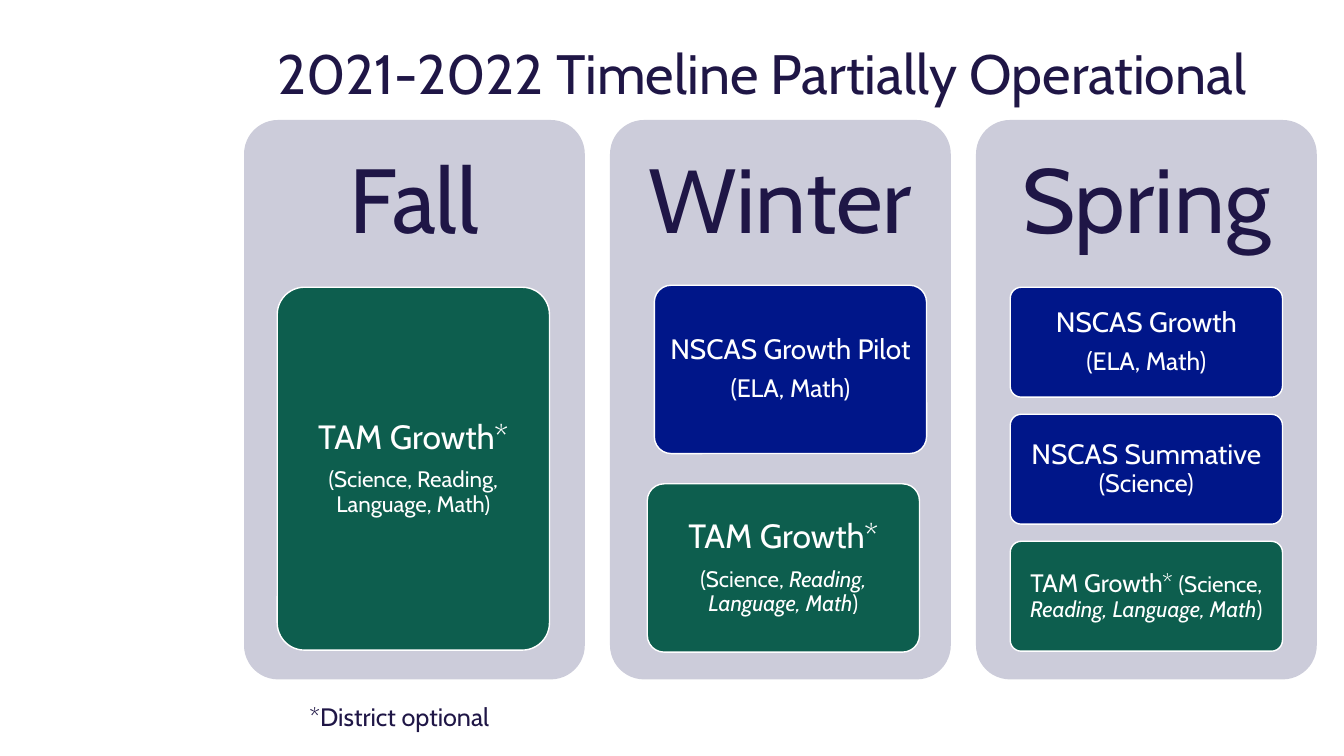
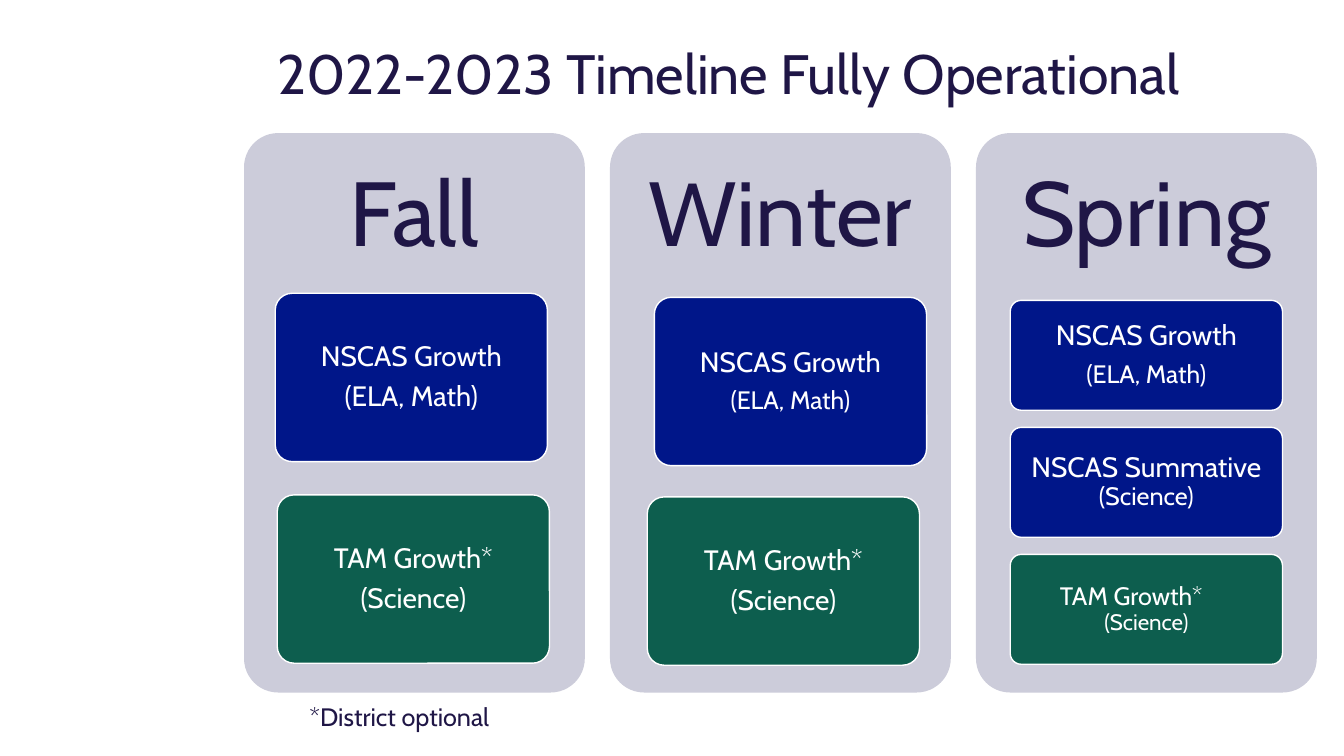
from dataclasses import dataclass

from pptx import Presentation
from pptx.dml.color import RGBColor
from pptx.enum.shapes import MSO_SHAPE
from pptx.enum.text import MSO_ANCHOR, PP_ALIGN
from pptx.util import Inches, Pt

NAVY = RGBColor(0x1F, 0x16, 0x46)
BLUE = RGBColor(0x00, 0x16, 0x89)
GREEN = RGBColor(0x0D, 0x5E, 0x4E)
LAVENDER = RGBColor(0xCC, 0xCC, 0xDA)
WHITE = RGBColor(0xFF, 0xFF, 0xFF)
FONT = "Cabin"

SEASONS = ("Fall", "Winter", "Spring")
COLUMN_LEFT, COLUMN_STEP = 2.42, 3.63
COLUMN_WIDTH, COLUMN_HEIGHT = 3.38, 5.55
HEADING_HEIGHT = 1.66
CARD_WIDTH = 2.7
TALL, MEDIUM, SHORT = 3.6, 1.67, 1.09
SPRING_LEFT, SPRING_STEP = 0.34, 1.26
SPACE_AFTER = 0.35  # share of the font size
STAGGER = 0.3


@dataclass
class Card:
    """A coloured card; left and top are measured from its column's corner.

    Each line is a list of (text, size) or (text, size, italic) spans.
    A staggered card sets its first line left of centre.
    """
    left: float
    top: float
    height: float
    color: RGBColor
    lines: list
    staggered: bool = False


def spring_card(row, color, lines, staggered=False):
    top = HEADING_HEIGHT + row * SPRING_STEP
    return Card(SPRING_LEFT, top, SHORT, color, lines, staggered)


def set_all(target, values):
    for name, value in values.items():
        setattr(target, name, value)


def set_frame(frame, side, end, anchor=MSO_ANCHOR.MIDDLE):
    set_all(frame, {
        "word_wrap": True, "vertical_anchor": anchor,
        "margin_left": Inches(side), "margin_right": Inches(side),
        "margin_top": Inches(end), "margin_bottom": Inches(end),
    })


def add_spans(para, spans, color):
    for text, size, *italic in spans:
        span = para.add_run()
        span.text = text
        set_all(span.font, {"name": FONT, "size": Pt(size), "italic": bool(italic and italic[0])})
        span.font.color.rgb = color


def add_text(page, area, text, size, margins=(0.1, 0.05), anchor=MSO_ANCHOR.MIDDLE, **para_format):
    box = page.shapes.add_textbox(*map(Inches, area))
    set_frame(box.text_frame, *margins, anchor)
    para = box.text_frame.paragraphs[0]
    set_all(para, para_format)
    add_spans(para, [(text, size)], NAVY)


def add_panel(page, area, color):
    panel = page.shapes.add_shape(MSO_SHAPE.ROUNDED_RECTANGLE, *map(Inches, area))
    panel.adjustments[0] = 0.1
    panel.shadow.inherit = False
    panel.fill.solid()
    panel.fill.fore_color.rgb = color
    panel.line.fill.background()
    return panel


def add_card(page, column_left, column_top, card):
    area = (column_left + card.left, column_top + card.top, CARD_WIDTH, card.height)
    panel = add_panel(page, area, card.color)
    panel.line.color.rgb = WHITE
    panel.line.width = Pt(1)
    frame = panel.text_frame
    set_frame(frame, 0.06, 0.04)
    for index, spans in enumerate(card.lines):
        para = frame.add_paragraph() if index else frame.paragraphs[0]
        set_all(para, {
            "alignment": PP_ALIGN.CENTER, "line_spacing": 0.9,
            "space_after": Pt(SPACE_AFTER * spans[0][1]),
        })
        add_spans(para, spans, WHITE)
    if card.staggered:
        frame.margin_right += Inches(STAGGER)
        first, last = frame.paragraphs
        first.space_after = Pt(0)
        last._p.get_or_add_pPr().set("marL", str(Inches(STAGGER)))


def add_season(page, left, top, season, cards):
    add_panel(page, (left, top, COLUMN_WIDTH, COLUMN_HEIGHT), LAVENDER)
    add_text(page, (left, top, COLUMN_WIDTH, HEADING_HEIGHT), season, 65,
             margins=(0.27, 0.27), alignment=PP_ALIGN.CENTER, line_spacing=0.9,
             space_after=Pt(SPACE_AFTER * 65))
    for card in cards:
        add_card(page, left, top, card)


def add_timeline(deck, title, top, seasons):
    page = deck.slides.add_slide(deck.slide_layouts[6])
    add_text(page, (2.65, 0.49, 10.21, 0.53), title, 39.6, line_spacing=0.9)
    for index, (season, cards) in enumerate(zip(SEASONS, seasons)):
        add_season(page, COLUMN_LEFT + index * COLUMN_STEP, top, season, cards)
    add_text(page, (2.97, 6.91, 3.95, 0.4), "*District optional", 18, anchor=MSO_ANCHOR.TOP)


def main():
    deck = Presentation()
    deck.slide_width, deck.slide_height = Inches(13.33), Inches(7.5)

    optional_large = [("TAM Growth*", 24)]
    optional = [("TAM Growth*", 20)]
    growth = [("NSCAS Growth", 20)]
    ela_math = [("(ELA, Math)", 18)]
    science = [("(Science)", 20)]
    partly_italic = [("(Science, ", 16), ("Reading, Language, Math", 16, True), (")", 16)]
    spring_shared = [
        spring_card(0, BLUE, [growth, ela_math]),
        spring_card(1, BLUE, [[("NSCAS Summative ", 20), ("(Science)", 18)]]),
    ]

    add_timeline(deck, "2021-2022 Timeline Partially Operational", 1.19, [
        [Card(0.33, 1.66, TALL, GREEN,
              [optional_large, [("(Science, Reading, Language, Math)", 16)]])],
        [Card(0.44, 1.64, MEDIUM, BLUE, [[("NSCAS Growth Pilot", 20)], ela_math]),
         Card(0.37, 3.61, MEDIUM, GREEN, [optional_large, partly_italic])],
        spring_shared + [spring_card(2, GREEN, [[("TAM Growth* ", 18)] + partly_italic])],
    ])
    add_timeline(deck, "2022-2023 Timeline Fully Operational", 1.32, [
        [Card(0.31, 1.59, MEDIUM, BLUE, [growth, [("(ELA, Math)", 20)]]),
         Card(0.33, 3.59, MEDIUM, GREEN, [optional, science])],
        [Card(0.44, 1.63, MEDIUM, BLUE, [growth, ela_math]),
         Card(0.37, 3.61, MEDIUM, GREEN, [optional, science])],
        spring_shared + [spring_card(2, GREEN, [[("TAM Growth*", 18)], [("(Science)", 16)]],
                                     staggered=True)],
    ])
    deck.save("out.pptx")


if __name__ == "__main__":
    main()
